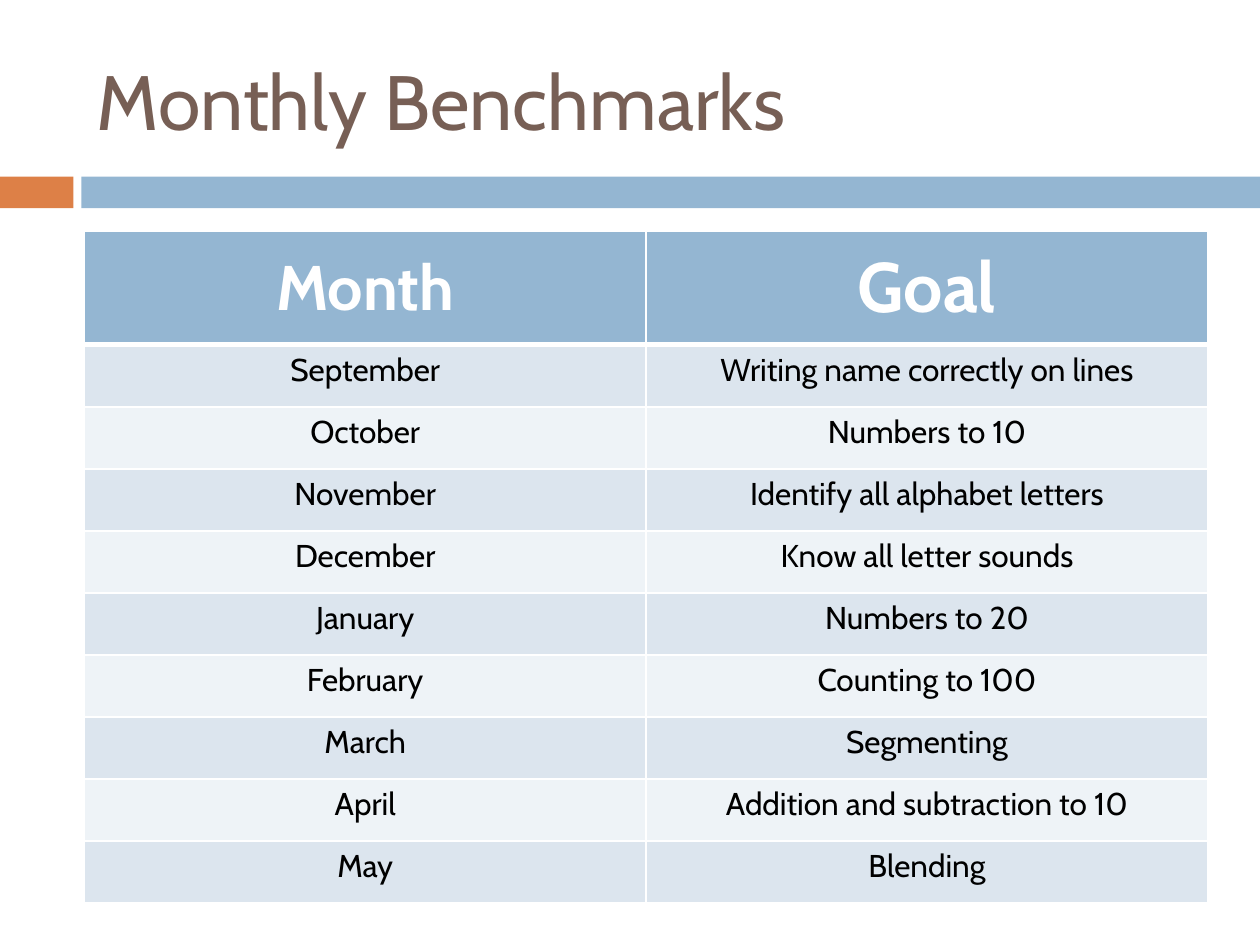
from lxml import etree
from pptx import Presentation
from pptx.dml.color import RGBColor
from pptx.enum import shapes, text
from pptx.oxml.ns import qn
from pptx.util import Cm, Pt

# Content
TITLE = "Monthly Benchmarks"
HEADERS = [("Month", 36), ("Goal", 40)]
BENCHMARKS = [
    ("September", "Writing name correctly on lines"),
    ("October", "Numbers to 10"),
    ("November", "Identify all alphabet letters"),
    ("December", "Know all letter sounds"),
    ("January", "Numbers to 20"),
    ("February", "Counting to 100"),
    ("March", "Segmenting"),
    ("April", "Addition and subtraction to 10"),
    ("May", "Blending"),
]

# Style and layout (cm)
FONT = "Cabin"
COLORS = {
    "title": "775F55",
    "accent": "DD8047",
    "blue": "94B6D2",
    "odd_row": "DCE5EE",
    "even_row": "EEF3F7",
    "white": "FFFFFF",
    "black": "000000",
}
SLIDE_WIDTH, SLIDE_HEIGHT = 25.4, 19.05
LEFT, CONTENT_WIDTH = 1.7, 22.65
BAR_TOP, BAR_HEIGHT = 3.56, 0.64
ACCENT_WIDTH, BAR_LEFT = 1.48, 1.64
TABLE_TOP, HEADER_HEIGHT, ROW_HEIGHT = 4.66, 2.29, 1.25


def color(name):
    return RGBColor.from_string(COLORS[name])


def set_font(paragraph, size, color_name, bold=False):
    paragraph.font.name = FONT
    paragraph.font.size = Pt(size)
    paragraph.font.bold = bold
    paragraph.font.color.rgb = color(color_name)


def add_bar(slide, left, width, color_name):
    shape = slide.shapes.add_shape(
        shapes.MSO_SHAPE.RECTANGLE, Cm(left), Cm(BAR_TOP), Cm(width), Cm(BAR_HEIGHT))
    shape.shadow.inherit = False
    shape.fill.solid()
    shape.fill.fore_color.rgb = color(color_name)
    shape.line.fill.background()


def add_title(slide):
    box = slide.shapes.add_textbox(Cm(LEFT), Cm(0.64), Cm(CONTENT_WIDTH), Cm(2.74))
    frame = box.text_frame
    frame.word_wrap = True
    frame.vertical_anchor = text.MSO_ANCHOR.MIDDLE
    frame.text = TITLE
    set_font(frame.paragraphs[0], 44, "title")


def set_borders(cell, top=1, bottom=1):
    properties = cell._tc.get_or_add_tcPr()
    widths = {"a:lnL": 1, "a:lnR": 1, "a:lnT": top, "a:lnB": bottom}
    for position, (tag, width) in enumerate(widths.items()):
        line = etree.Element(qn(tag), w=str(Pt(width)))
        fill = etree.SubElement(line, qn("a:solidFill"))
        etree.SubElement(fill, qn("a:srgbClr"), val=COLORS["white"])
        properties.insert(position, line)


def fill_cell(cell, label, size, text_color, fill_color, bold=False):
    cell.text = label
    paragraph = cell.text_frame.paragraphs[0]
    paragraph.alignment = text.PP_ALIGN.CENTER
    set_font(paragraph, size, text_color, bold)
    cell.fill.solid()
    cell.fill.fore_color.rgb = color(fill_color)


def add_benchmark_table(slide):
    row_count, column_count = len(BENCHMARKS) + 1, len(HEADERS)
    height = HEADER_HEIGHT + ROW_HEIGHT * len(BENCHMARKS)
    table = slide.shapes.add_table(
        row_count, column_count, Cm(LEFT), Cm(TABLE_TOP),
        Cm(CONTENT_WIDTH), Cm(height)).table
    for index, row in enumerate(table.rows):
        row.height = Cm(ROW_HEIGHT if index else HEADER_HEIGHT)

    # Header row with a thick rule below
    for column, (label, size) in enumerate(HEADERS):
        cell = table.cell(0, column)
        fill_cell(cell, label, size, "white", "blue", bold=True)
        cell.vertical_anchor = text.MSO_ANCHOR.MIDDLE
        set_borders(cell, bottom=3)

    # Banded month rows
    for row, benchmark in enumerate(BENCHMARKS, start=1):
        band = "odd_row" if row % 2 else "even_row"
        for column, label in enumerate(benchmark):
            cell = table.cell(row, column)
            fill_cell(cell, label, 18, "black", band)
            set_borders(cell, top=3 if row == 1 else 1)


def main():
    presentation = Presentation()
    presentation.slide_width = Cm(SLIDE_WIDTH)
    presentation.slide_height = Cm(SLIDE_HEIGHT)
    slide = presentation.slides.add_slide(presentation.slide_layouts[6])
    add_bar(slide, 0, ACCENT_WIDTH, "accent")
    add_bar(slide, BAR_LEFT, SLIDE_WIDTH - BAR_LEFT, "blue")
    add_title(slide)
    add_benchmark_table(slide)
    presentation.save("out.pptx")


if __name__ == "__main__":
    main()
